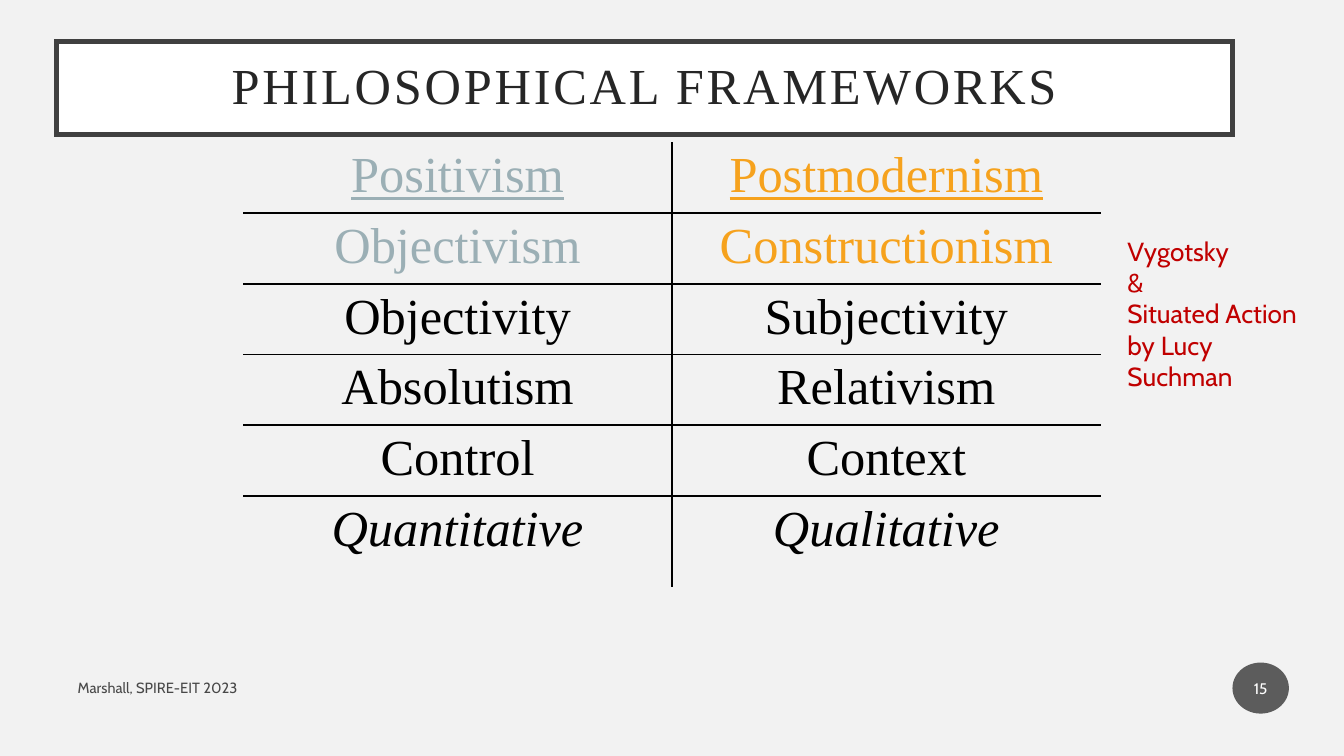
from lxml import etree
from pptx import Presentation
from pptx.dml.color import RGBColor
from pptx.enum.shapes import MSO_SHAPE
from pptx.enum.text import MSO_ANCHOR, MSO_AUTO_SIZE, PP_ALIGN
from pptx.oxml.ns import qn
from pptx.util import Inches, Pt

OVAL = MSO_SHAPE.OVAL
TOP, MIDDLE = MSO_ANCHOR.TOP, MSO_ANCHOR.MIDDLE
LEFT, CENTER = PP_ALIGN.LEFT, PP_ALIGN.CENTER
NO_FIT = MSO_AUTO_SIZE.NONE
SERIF, SANS = "Times New Roman", "Cabin"
COLORS = {
    "paper": "F2F2F2", "white": "FFFFFF", "black": "000000", "frame": "404040",
    "title": "262626", "badge": "1D1D1D", "steel": "9BAFB5",
    "orange": "F6A21D", "red": "C00000",
}
FRAMEWORKS = [
    ("Positivism", "Postmodernism"),
    ("Objectivism", "Constructionism"),
    ("Objectivity", "Subjectivity"),
    ("Absolutism", "Relativism"),
    ("Control", "Context"),
    ("Quantitative", "Qualitative"),
]


def paint(fill, color, alpha=None):
    fill.solid()
    fill.fore_color.rgb = RGBColor.from_string(COLORS[color])
    if alpha:
        clr = fill._xPr.find(qn("a:solidFill"))[0]
        etree.SubElement(clr, qn("a:alpha")).set("val", str(alpha * 1000))


def write(tf, text, size, font=SANS, color="black", align=LEFT, alpha=None,
          spacing=None, line=None, **style):
    for i, part in enumerate(text.split("\n")):
        p = tf.add_paragraph() if i else tf.paragraphs[0]
        p.alignment = align
        if line:
            p.line_spacing = line
        r = p.add_run()
        r.text = part
        r.font.name, r.font.size = font, Pt(size)
        for name, value in style.items():
            setattr(r.font, name, value)
        paint(r.font.fill, color, alpha)
        if spacing:
            r.font._element.set("spc", str(int(spacing * 100)))


class Deck:
    """Holds the presentation, its style and the current slide."""

    def __init__(self):
        self.prs = Presentation()
        self.prs.slide_width = Inches(10)
        self.prs.slide_height = self.prs.slide_width * 9 // 16
        self.s = self.prs.slides.add_slide(self.prs.slide_layouts[5])
        paint(self.s.background.fill, "paper")

    def frame(self, sp, anchor=TOP, insets=(0.1, 0.05)):
        tf = sp.text_frame
        tf.word_wrap = True
        tf.auto_size = NO_FIT
        tf.vertical_anchor = anchor
        tf.margin_left = tf.margin_right = Inches(insets[0])
        tf.margin_top = tf.margin_bottom = Inches(insets[1])
        return tf

    def title(self, text, *box):
        sp = self.s.shapes.title
        sp.left, sp.top, sp.width, sp.height = map(Inches, box)
        paint(sp.fill, "white")
        paint(sp.line.fill, "frame")
        sp.line.width = Pt(2.5)
        ln = sp._element.spPr.find(qn("a:ln"))
        etree.SubElement(ln, qn("a:miter"), lim="800000")
        write(self.frame(sp, MIDDLE, (0.2, 0.2)), text, 27, font=SERIF,
              color="title", align=CENTER, spacing=1.5, line=0.9)

    def text(self, text, size, *box, anchor=TOP, **style):
        sp = self.s.shapes.add_textbox(*map(Inches, box))
        write(self.frame(sp, anchor), text, size, **style)

    def badge(self, text, *box):
        sp = self.s.shapes.add_shape(OVAL, *map(Inches, box))
        sp.shadow.inherit = False
        sp.line.fill.background()
        paint(sp.fill, "badge", 70)
        write(self.frame(sp, MIDDLE, (0.02, 0.05)), text, 8.2,
              color="white", align=CENTER)

    def borders(self, cell, drawn):
        tc_pr = cell._tc.get_or_add_tcPr()
        for i, side in enumerate("LRTB"):
            ln = etree.Element(qn(f"a:ln{side}"), w=str(Pt(1)))
            if side in drawn:
                fill = etree.SubElement(ln, qn("a:solidFill"))
                etree.SubElement(fill, qn("a:srgbClr"), val=COLORS["black"])
            else:
                etree.SubElement(ln, qn("a:noFill"))
            tc_pr.insert(i, ln)

    def table(self, rows, left, top, width, height, last_height):
        table = self.s.shapes.add_table(
            len(rows), 2, *map(Inches, (left, top, width, height))).table
        table.first_row = table.horz_banding = False
        last = len(rows) - 1
        row_height = (height - last_height) / last
        for i, row in enumerate(rows):
            table.rows[i].height = Inches(row_height if i < last else last_height)
            for j, text in enumerate(row):
                cell = table.cell(i, j)
                cell.fill.background()
                self.borders(cell, ("L" if j else "R") + ("T" if i else "")
                             + ("B" if i < last else ""))
                cell.margin_left = cell.margin_right = Inches(0.07)
                cell.margin_top = cell.margin_bottom = Inches(0.04)
                color = ("steel", "orange")[j] if i < 2 else "black"
                write(cell.text_frame, text, 27, font=SERIF, color=color,
                      align=CENTER, underline=i == 0, italic=i == last)


def main():
    deck = Deck()
    deck.title("PHILOSOPHICAL FRAMEWORKS", 0.42, 0.31, 8.75, 0.69)
    deck.table(FRAMEWORKS, 1.81, 1.06, 6.38, 3.31, 0.68)
    deck.text("Vygotsky\n&\nSituated Action by Lucy Suchman", 14,
              8.29, 1.7, 1.58, 1.04, color="red")
    deck.text("Marshall, SPIRE-EIT 2023", 7.9, 0.48, 4.93, 3.17, 0.38,
              anchor=MIDDLE, alpha=70)
    deck.badge("15", 9.17, 4.93, 0.42, 0.38)
    deck.prs.save("out.pptx")


if __name__ == "__main__":
    main()
